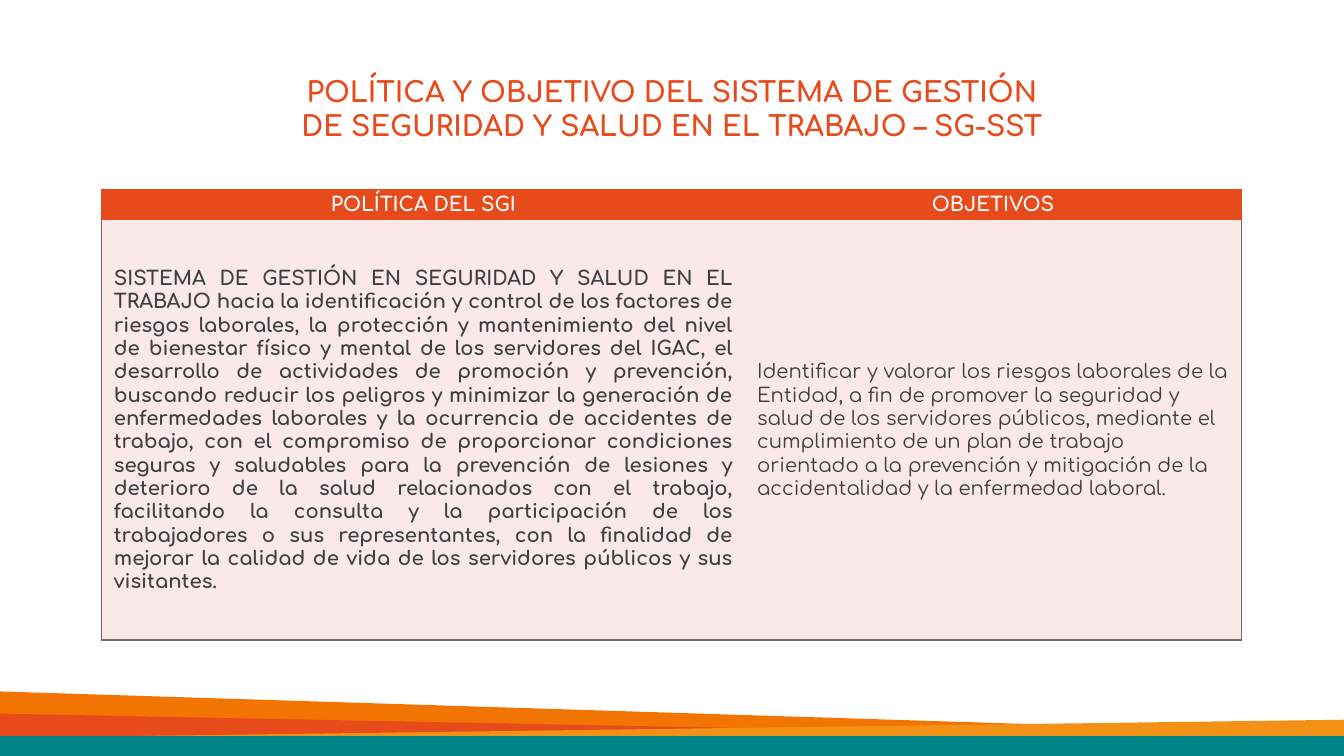
from dataclasses import dataclass

from lxml.etree import SubElement
from pptx import Presentation
from pptx.dml.color import RGBColor
from pptx.enum.text import MSO_ANCHOR, MSO_AUTO_SIZE, PP_ALIGN
from pptx.oxml.ns import qn
from pptx.util import Inches, Pt


@dataclass(frozen=True)
class Theme:
    font: str = "Comfortaa"
    red: str = "E74A1B"
    orange: str = "F27503"
    amber: str = "F29115"
    teal: str = "008486"
    blush: str = "FAE9E8"
    outline: str = "7A6678"
    white: str = "FFFFFF"
    ink: str = "3F3F3F"
    title_size: int = 20
    table_size: int = 14


THEME = Theme()
WIDTH, HEIGHT = 13.33, 7.5
TITLE = "POLÍTICA Y OBJETIVO DEL SISTEMA DE GESTIÓN\nDE SEGURIDAD Y SALUD EN EL TRABAJO – SG-SST"
HEADINGS = ("POLÍTICA DEL SGI", "OBJETIVOS")
POLICY = (
    "SISTEMA DE GESTIÓN EN SEGURIDAD Y SALUD EN EL TRABAJO hacia la identificación y control "
    "de los factores de riesgos laborales, la protección y mantenimiento del nivel de bienestar "
    "físico y mental de los servidores del IGAC, el desarrollo de actividades de promoción y "
    "prevención, buscando reducir los peligros y minimizar la generación de enfermedades "
    "laborales y la ocurrencia de accidentes de trabajo, con el compromiso de proporcionar "
    "condiciones seguras y saludables para la prevención de lesiones y deterioro de la salud "
    "relacionados con el trabajo, facilitando la consulta y la participación de los trabajadores "
    "o sus representantes, con la finalidad de mejorar la calidad de vida de los servidores "
    "públicos y sus visitantes."
)
OBJECTIVE = (
    "Identificar y valorar los riesgos laborales de la Entidad, a fin de promover la seguridad y "
    "salud de los servidores públicos, mediante el cumplimiento de un plan de trabajo orientado "
    "a la prevención y mitigación de la accidentalidad y la enfermedad laboral."
)


def format_paragraph(para, size, color, align, bold):
    para.alignment = align
    for span in para.runs:
        span.font.name = THEME.font
        span.font.size = Pt(size)
        span.font.bold = bold
        span.font.color.rgb = RGBColor.from_string(color)


def add_band(page, points, color):
    corners = [(Inches(x), Inches(y)) for x, y in points]
    builder = page.shapes.build_freeform(*corners[0])
    builder.add_line_segments(corners[1:], close=True)
    band = builder.convert_to_shape()
    band.shadow.inherit = False
    band.fill.solid()
    band.fill.fore_color.rgb = RGBColor.from_string(color)
    band.line.fill.background()


def add_footer(page, left, top, width, height):
    """Three slanted wedges over a flat strip."""
    right, bottom = left + width, top + height
    wedges = (
        (left, left + 11.66, top, 0.37, THEME.orange),
        (left, right, top + 0.22, 0.26, THEME.red),
        (right, left, top + 0.28, 0.18, THEME.amber),
    )
    for tall, tip, peak, drop, color in wedges:
        base = peak + drop
        add_band(page, [(tall, base), (tall, peak), (tip, base)], color)
    strip = bottom - 0.2
    add_band(page, [(left, strip), (right, strip), (right, bottom), (left, bottom)], THEME.teal)


def add_title(page, left, top, width, height):
    box = page.shapes.title
    box.left, box.top, box.width, box.height = map(Inches, (left, top, width, height))
    frame = box.text_frame
    frame.text = TITLE
    frame.word_wrap = True
    frame.auto_size = MSO_AUTO_SIZE.NONE
    frame.vertical_anchor = MSO_ANCHOR.MIDDLE
    for para in frame.paragraphs:
        format_paragraph(para, THEME.title_size, THEME.red, PP_ALIGN.CENTER, True)


def set_borders(cell, colors):
    """Draw the sides named in colors and hide the others."""
    properties = cell._tc.get_or_add_tcPr()
    for side in ("L", "R", "T", "B"):
        line = SubElement(properties, qn(f"a:ln{side}"), w=str(Pt(1)))
        if side in colors:
            fill = SubElement(line, qn("a:solidFill"))
            SubElement(fill, qn("a:srgbClr"), val=colors[side])
        else:
            SubElement(line, qn("a:noFill"))


def fill_cell(cell, text, fill, color, align, bold, inset, borders):
    set_borders(cell, borders)
    cell.fill.solid()
    cell.fill.fore_color.rgb = RGBColor.from_string(fill)
    cell.vertical_anchor = MSO_ANCHOR.MIDDLE
    cell.margin_left = cell.margin_right = Inches(inset)
    cell.margin_top = cell.margin_bottom = 0
    cell.text_frame.text = text
    para = cell.text_frame.paragraphs[0]
    para.line_spacing = 1.07
    para.space_after = Pt(8)
    format_paragraph(para, THEME.table_size, color, align, bold)


def add_policy_table(page, left, top, width, height):
    frame = page.shapes.add_table(2, 2, *map(Inches, (left, top, width, height)))
    table = frame.table
    table.first_row = table.horz_banding = False
    policy_width, header_height = 6.38, 0.3
    for column, size in zip(table.columns, (policy_width, width - policy_width)):
        column.width = Inches(size)
    for row, size in zip(table.rows, (header_height, height - header_height)):
        row.height = Inches(size)

    # Header and body of each column
    columns = (
        ("L", POLICY, PP_ALIGN.JUSTIFY, True),
        ("R", OBJECTIVE, PP_ALIGN.LEFT, False),
    )
    for index, (side, text, align, bold) in enumerate(columns):
        fill_cell(table.cell(0, index), HEADINGS[index], THEME.red, THEME.white,
                  PP_ALIGN.CENTER, True, 0.06, dict.fromkeys((side, "T", "B"), THEME.red))
        fill_cell(table.cell(1, index), text, THEME.blush, THEME.ink, align, bold, 0.12,
                  {side: THEME.outline, "T": THEME.red, "B": THEME.outline})


def main():
    deck = Presentation()
    deck.slide_width, deck.slide_height = Inches(WIDTH), Inches(HEIGHT)
    page = deck.slides.add_slide(deck.slide_layouts[5])
    add_footer(page, 0, 6.86, WIDTH, HEIGHT - 6.86)
    add_title(page, 1.95, 0.69, 9.43, 0.77)
    add_policy_table(page, 1.01, 1.88, 11.3, 4.47)
    deck.save("out.pptx")


if __name__ == "__main__":
    main()
